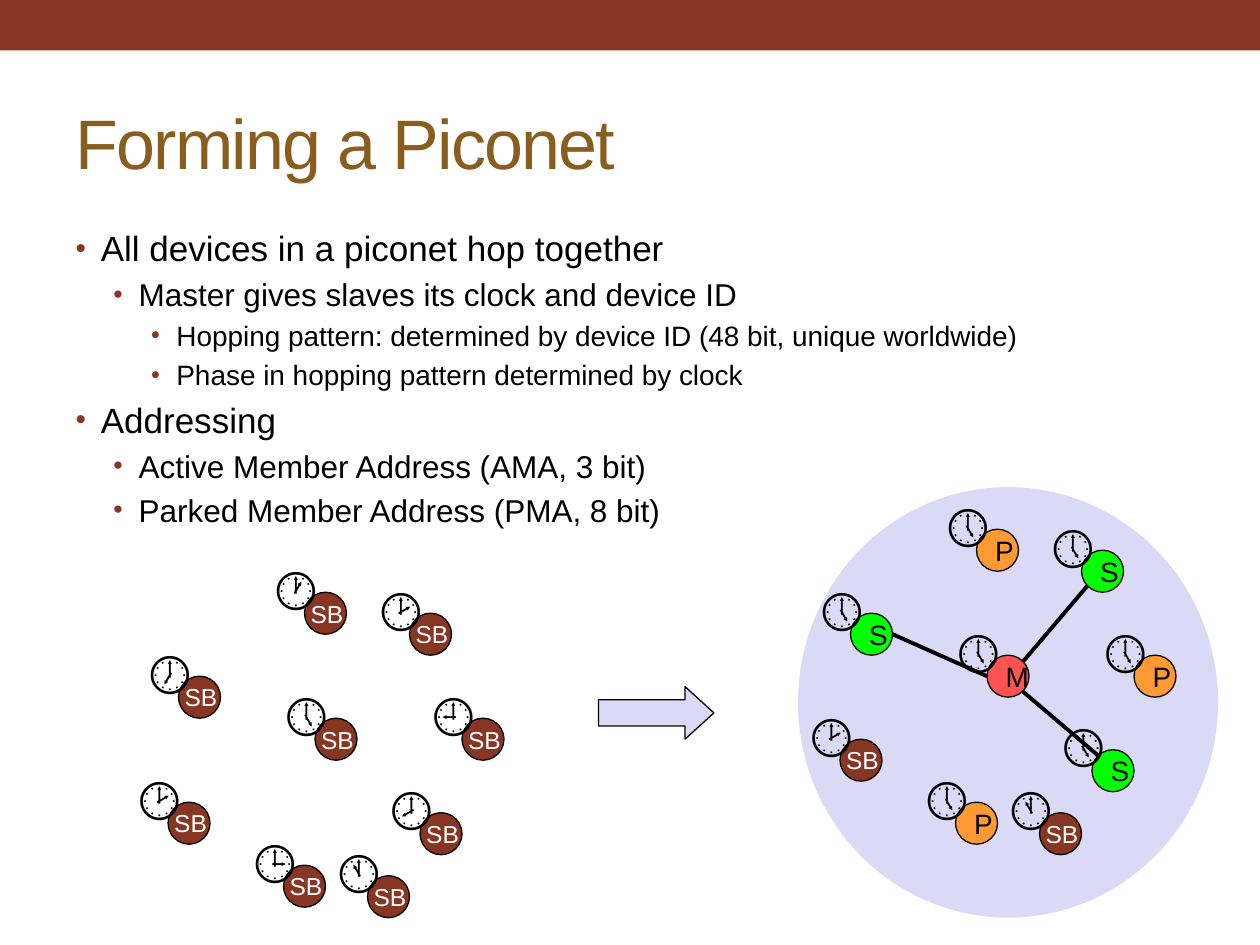
"""Build a slide on forming a piconet, with devices before and after they join."""
from lxml import etree
from pptx import Presentation
from pptx.dml.color import RGBColor
from pptx.enum.shapes import MSO_CONNECTOR, MSO_SHAPE
from pptx.enum.text import MSO_ANCHOR, MSO_AUTO_SIZE, PP_ALIGN
from pptx.oxml.ns import qn
from pptx.util import Pt

RECT, OVAL, ARROW = MSO_SHAPE.RECTANGLE, MSO_SHAPE.OVAL, MSO_SHAPE.RIGHT_ARROW
LINE = MSO_CONNECTOR.STRAIGHT
MIDDLE, LEFT = MSO_ANCHOR.MIDDLE, PP_ALIGN.LEFT
FIT, FIXED = MSO_AUTO_SIZE.SHAPE_TO_FIT_TEXT, MSO_AUTO_SIZE.NONE

BROWN = RGBColor(0x87, 0x36, 0x24)
GOLD = RGBColor(0x89, 0x5D, 0x1D)
LILAC = RGBColor(0xDA, 0xDA, 0xF6)
RED = RGBColor(0xFF, 0x53, 0x53)
GREEN = RGBColor(0x00, 0xFF, 0x00)
ORANGE = RGBColor(0xFF, 0x99, 0x33)
BLACK = RGBColor(0x00, 0x00, 0x00)
WHITE = RGBColor(0xFF, 0xFF, 0xFF)

DOT = 24
ROLES = {
    "SB": (BROWN, WHITE, 14, 0),
    "M": (RED, BLACK, 16, 7.2),
    "S": (GREEN, BLACK, 16, 7.2),
    "P": (ORANGE, BLACK, 16, 7.2),
}
POINTS = [
    (0, 20, "All devices in a piconet hop together"),
    (1, 18, "Master gives slaves its clock and device ID"),
    (2, 16, "Hopping pattern: determined by device ID (48 bit, unique worldwide)"),
    (2, 16, "Phase in hopping pattern determined by clock"),
    (0, 20, "Addressing"),
    (1, 18, "Active Member Address (AMA, 3 bit)"),
    (1, 18, "Parked Member Address (PMA, 8 bit)"),
]
LOOSE = [
    ("SB", 180, 410.4, "🕔"), ("SB", 102, 386.4, "🕖"), ("SB", 162, 494.4, "🕒"),
    ("SB", 96, 458.4, "🕑"), ("SB", 234, 350.4, "🕑"), ("SB", 240, 464.4, "🕗"),
    ("SB", 174, 338.4, "🕐"), ("SB", 264, 410.4, "🕘"), ("SB", 210, 500.4, "🕚"),
]
JOINED = [
    ("M", 564, 374.4, "🕔"), ("S", 486, 350.4, "🕔"), ("P", 546, 458.4, "🕔"),
    ("SB", 480, 422.4, "🕑"), ("S", 618, 314.4, "🕔"), ("S", 624, 428.4, "🕔"),
    ("P", 558, 302.4, "🕔"), ("P", 648, 374.4, "🕔"), ("SB", 594, 464.4, "🕚"),
]
LINKS = [
    (564, 386.4, 510, 362.4),
    (584.64, 378, 621.36, 334.8),
    (627.84, 432, 584.64, 395.28),
]

deck = Presentation()
deck.slide_width, deck.slide_height = Pt(720), Pt(540)
slide = deck.slides.add_slide(deck.slide_layouts[1])
shapes = slide.shapes


def draw(kind, box, fill, edge=True):
    shape = shapes.add_shape(kind, *map(Pt, box))
    shape.shadow.inherit = False
    shape.fill.solid()
    shape.fill.fore_color.rgb = fill
    if edge:
        shape.line.color.rgb = BLACK
        shape.line.width = Pt(0.75)
    else:
        shape.line.fill.background()
    return shape


def style(para, size, color):
    para.alignment = LEFT
    for run in para.runs:
        run.font.name = "Arial"
        run.font.size = Pt(size)
        run.font.color.rgb = color


draw(RECT, (0, 0, 720, 28.8), BROWN, False)

title = shapes.title
title.left, title.top, title.width, title.height = map(Pt, (36, 42, 648, 78))
frame = title.text_frame
frame.text = "Forming a Piconet"
frame.vertical_anchor = MIDDLE
frame.auto_size = FIXED
style(frame.paragraphs[0], 40, GOLD)
frame.paragraphs[0].runs[0].font._element.set("spc", "-100")

body = slide.placeholders[1]
body.left, body.top, body.width, body.height = map(Pt, (36, 126, 648, 384))
frame = body.text_frame
frame.text = "\n".join(text for level, size, text in POINTS)
frame.auto_size = FIXED
for para, (level, size, text) in zip(frame.paragraphs, POINTS):
    para.level = level
    props = para._p.get_or_add_pPr()
    props.set("marL", str(Pt(14.4 + 21.6 * level)))
    props.set("indent", str(Pt(-14.4)))
    tint = etree.SubElement(props, qn("a:buClr"))
    etree.SubElement(tint, qn("a:srgbClr"), val=str(BROWN))
    scale = "90000" if level == 2 else "85000"
    etree.SubElement(props, qn("a:buSzPct"), val=scale)
    etree.SubElement(props, qn("a:buFont"), typeface="Arial")
    etree.SubElement(props, qn("a:buChar"), char="•")
    style(para, size, BLACK)
frame.paragraphs[0].space_before = Pt(0)

for group in (LOOSE, JOINED):
    if group is JOINED:
        draw(OVAL, (456, 278.4, 240, 246), LILAC, False)
    for role, x, y, clock in group:
        fill, ink, size, inset = ROLES[role]
        frame = draw(OVAL, (x, y, DOT, DOT), fill).text_frame
        frame.text = role
        frame.word_wrap = False
        frame.vertical_anchor = MIDDLE
        frame.margin_left = frame.margin_right = Pt(inset)
        frame.margin_top = frame.margin_bottom = Pt(inset / 2)
        style(frame.paragraphs[0], size, ink)

for ends in LINKS:
    link = shapes.add_connector(LINE, *map(Pt, ends))
    link.line.color.rgb = BLACK
    link.line.width = Pt(2.25)
    etree.SubElement(link._element.spPr, qn("a:effectLst"))

arrow = draw(ARROW, (342, 392.4, 66, 30), LILAC)
arrow.adjustments[0] = 0.5
arrow.adjustments[1] = 0.55

for role, x, y, clock in LOOSE + JOINED:
    face = shapes.add_textbox(Pt(x - DOT), Pt(y - DOT), Pt(39.6), Pt(41))
    frame = face.text_frame
    frame.text = clock
    frame.word_wrap = False
    frame.auto_size = FIT
    style(frame.paragraphs[0], 28, BLACK)

deck.save("out.pptx")
